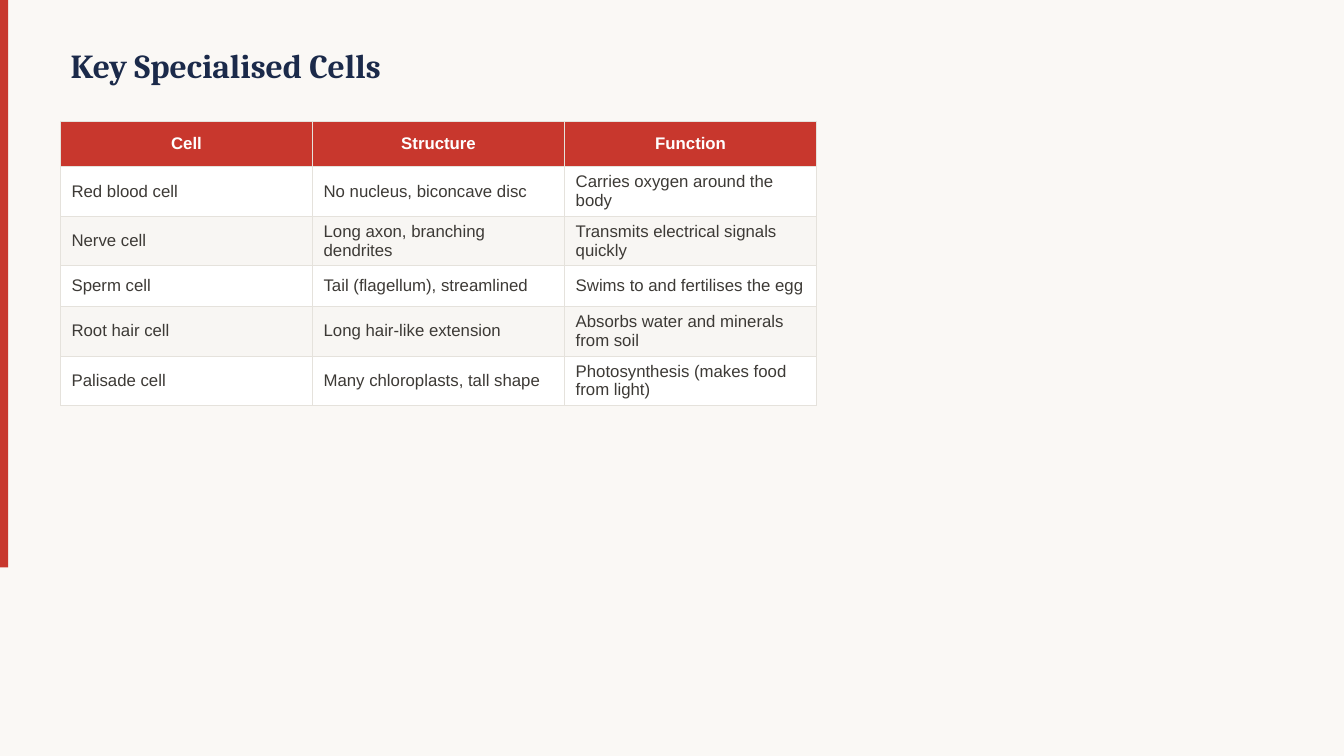
from pptx import Presentation
from pptx.dml.color import RGBColor
from pptx.enum.shapes import MSO_SHAPE as Shape
from pptx.enum.text import MSO_ANCHOR as Anchor, MSO_AUTO_SIZE as Fit, PP_ALIGN as Align
from pptx.oxml import parse_xml
from pptx.oxml.ns import nsdecls
from pptx.util import Inches, Pt

RED = RGBColor(0xC8, 0x37, 0x2D)
NAVY = RGBColor(0x1B, 0x2A, 0x4A)
INK = RGBColor(0x3D, 0x3A, 0x36)
WHITE = RGBColor(0xFF, 0xFF, 0xFF)
CREAM = RGBColor(0xFA, 0xF8, 0xF5)
BAND = RGBColor(0xF8, 0xF6, 0xF3)
RULE = RGBColor(0xE5, 0xE2, 0xDC)

CELLS = [
    ("Cell", "Structure", "Function"),
    ("Red blood cell", "No nucleus, biconcave disc", "Carries oxygen around the body"),
    ("Nerve cell", "Long axon, branching dendrites", "Transmits electrical signals quickly"),
    ("Sperm cell", "Tail (flagellum), streamlined", "Swims to and fertilises the egg"),
    ("Root hair cell", "Long hair-like extension", "Absorbs water and minerals from soil"),
    ("Palisade cell", "Many chloroplasts, tall shape", "Photosynthesis (makes food from light)"),
]


class Deck:
    """Holds the style and the current slide, and adds its elements."""

    head = "Cambria"
    body = "Arial"

    def __init__(self):
        self.show = Presentation()
        self.show.slide_width = Inches(13.33)
        self.show.slide_height = Inches(7.5)
        self.slide = self.show.slides.add_slide(self.show.slide_layouts[5])
        self.slide.background.fill.solid()
        self.slide.background.fill.fore_color.rgb = CREAM

    def font(self, para, name, size, color, bold):
        font = para.font
        font.name, font.size, font.bold = name, Pt(size), bold
        font.color.rgb = color

    def bar(self, left, top, width, height):
        bar = self.slide.shapes.add_shape(
            Shape.RECTANGLE, Inches(left), Inches(top), Inches(width), Inches(height))
        bar.shadow.inherit = False
        bar.fill.solid()
        bar.fill.fore_color.rgb = RED
        bar.line.fill.background()

    def title(self, text, left, top, width, height):
        title = self.slide.shapes.title
        title.left, title.top = Inches(left), Inches(top)
        title.width, title.height = Inches(width), Inches(height)
        frame = title.text_frame
        frame.text = text
        frame.auto_size = Fit.NONE
        frame.vertical_anchor = Anchor.MIDDLE
        para = frame.paragraphs[0]
        para.alignment = Align.LEFT
        self.font(para, self.head, 24, NAVY, True)

    def edge(self, cell):
        props = cell._tc.get_or_add_tcPr()
        for side in ("lnL", "lnR", "lnT", "lnB"):
            props.append(parse_xml(
                f'<a:{side} {nsdecls("a")} w="{Pt(0.5)}"><a:solidFill>'
                f'<a:srgbClr val="{RULE}"/></a:solidFill></a:{side}>'))

    def cell(self, cell, text, row):
        cell.text = text
        cell.vertical_anchor = Anchor.MIDDLE
        cell.margin_left = cell.margin_right = Inches(0.11)
        cell.margin_top = cell.margin_bottom = Inches(0.06)
        self.edge(cell)
        cell.fill.solid()
        cell.fill.fore_color.rgb = RED if row == 0 else WHITE if row % 2 else BAND
        para = cell.text_frame.paragraphs[0]
        para.alignment = Align.LEFT if row else Align.CENTER
        self.font(para, self.body, 12, INK if row else WHITE, row == 0)

    def table(self, rows, left, top, width, first, rest):
        height = first + rest * (len(rows) - 1)
        table = self.slide.shapes.add_table(
            len(rows), len(rows[0]), Inches(left), Inches(top),
            Inches(width), Inches(height)).table
        for r, texts in enumerate(rows):
            table.rows[r].height = Inches(rest if r else first)
            for c, text in enumerate(texts):
                self.cell(table.cell(r, c), text, r)


def main():
    deck = Deck()
    deck.bar(0, 0, 0.08, 5.63)
    deck.title("Key Specialised Cells", 0.6, 0.3, 10, 0.7)
    deck.table(CELLS, 0.6, 1.2, 7.5, 0.45, 0.4)
    deck.show.save("out.pptx")


if __name__ == "__main__":
    main()
